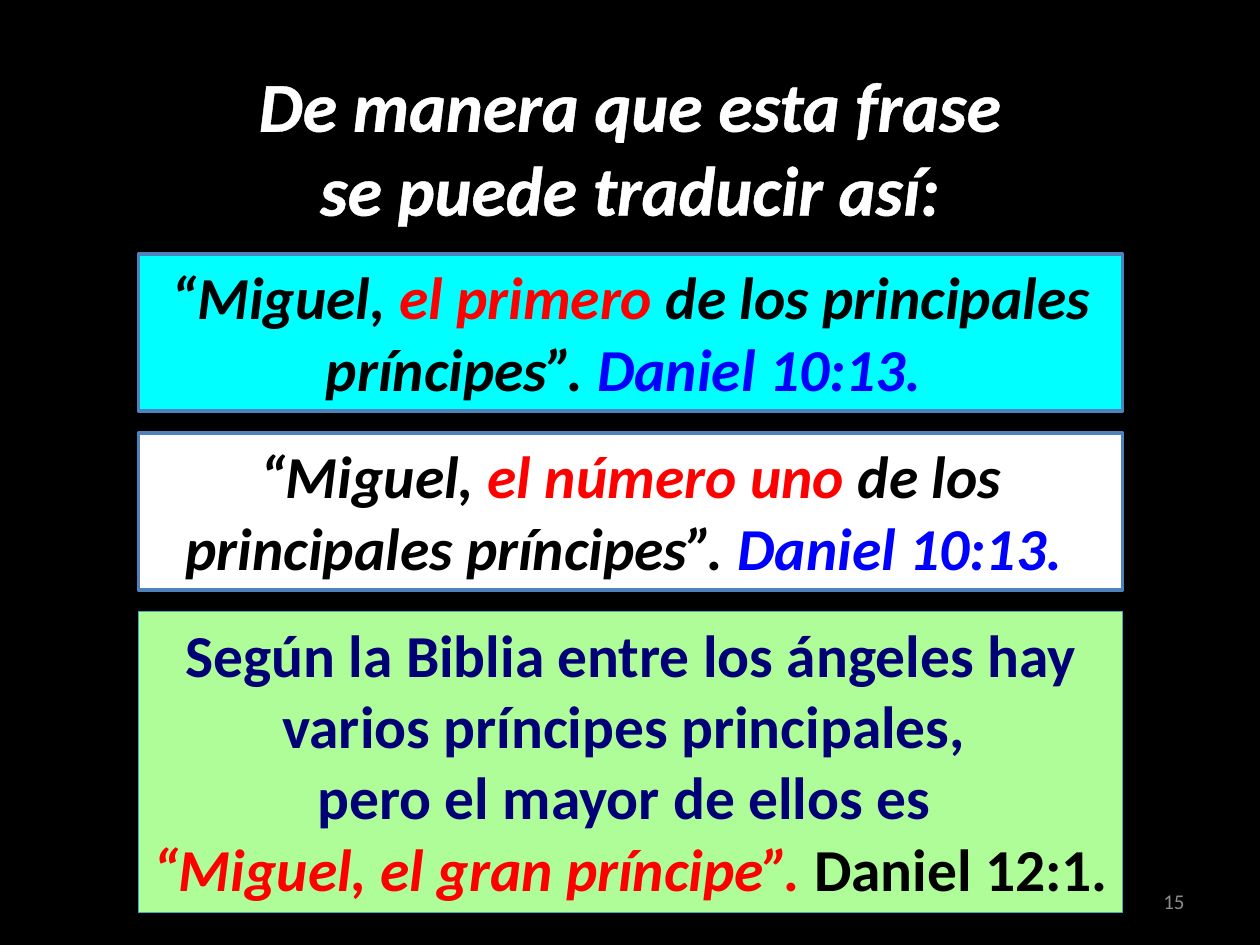
import pptx
import pptx.dml.color
import pptx.enum.shapes
import pptx.enum.text
import pptx.oxml
import pptx.oxml.ns
import pptx.util

Pt = pptx.util.Pt
RGB = pptx.dml.color.RGBColor
ALIGN = pptx.enum.text.PP_ALIGN
ANCHOR = pptx.enum.text.MSO_ANCHOR
AUTO_SIZE = pptx.enum.text.MSO_AUTO_SIZE

BLACK = RGB(0x00, 0x00, 0x00)
WHITE = RGB(0xFF, 0xFF, 0xFF)
RED = RGB(0xFF, 0x00, 0x00)
BLUE = RGB(0x00, 0x00, 0xFF)
NAVY = RGB(0x00, 0x00, 0x76)
CYAN = RGB(0x00, 0xFF, 0xFF)
GREEN = RGB(0xAE, 0xFD, 0x99)
FRAME_BLUE = RGB(0x4F, 0x81, 0xBD)
FRAME_TEAL = RGB(0x46, 0xAA, 0xC5)
GRAY = RGB(0x8C, 0x8C, 0x8C)

HEADING = dict(name="Calibri", size=Pt(40), bold=True, italic=True)
PLAIN = dict(name="Calibri", size=Pt(34), bold=True, italic=False)
QUOTE = dict(PLAIN, italic=True)
NUMBER = dict(name="Calibri", size=Pt(12))

BOX_LEFT, BOX_WIDTH = 79.2, 562.3


def set_attributes(target, values):
    for key, value in values.items():
        setattr(target, key, value)


def outline_text(run, color):
    outline = pptx.oxml.parse_xml(
        f'<a:ln {pptx.oxml.ns.nsdecls("a")} w="{Pt(0.75)}">'
        f'<a:solidFill><a:srgbClr val="{color}"/></a:solidFill></a:ln>')
    run.font._element.insert(0, outline)


def write_paragraphs(frame, paragraphs, align=ALIGN.CENTER, outlined=True):
    """Fill the frame with lists of (text, colour, font values)."""
    for index, pieces in enumerate(paragraphs):
        paragraph = frame.add_paragraph() if index else frame.paragraphs[0]
        paragraph.alignment = align
        for text, color, font_values in pieces:
            run = paragraph.add_run()
            run.text = text
            set_attributes(run.font, font_values)
            run.font.color.rgb = color
            if outlined:
                outline_text(run, color)


def add_heading(slide, left, top, width, height):
    heading = slide.shapes.title
    set_attributes(heading, dict(left=Pt(left), top=Pt(top),
                                 width=Pt(width), height=Pt(height)))
    set_attributes(heading.text_frame, dict(
        word_wrap=True, vertical_anchor=ANCHOR.TOP,
        auto_size=AUTO_SIZE.SHAPE_TO_FIT_TEXT))
    write_paragraphs(heading.text_frame, [
        [("De manera que esta frase se puede traducir así:", WHITE, HEADING)]])


def add_text_panel(slide, top, height, fill, frame_color, frame_width, paragraphs):
    panel = slide.shapes.add_shape(
        pptx.enum.shapes.MSO_SHAPE.RECTANGLE,
        Pt(BOX_LEFT), Pt(top), Pt(BOX_WIDTH), Pt(height))
    panel.fill.solid()
    panel.fill.fore_color.rgb = fill
    panel.line.color.rgb = frame_color
    panel.line.width = Pt(frame_width)
    panel.shadow.inherit = False
    set_attributes(panel.text_frame, dict(
        word_wrap=True, vertical_anchor=ANCHOR.TOP,
        auto_size=AUTO_SIZE.SHAPE_TO_FIT_TEXT))
    write_paragraphs(panel.text_frame, paragraphs)
    return panel


def add_translation(slide, top, height, fill, rank):
    add_text_panel(slide, top, height, fill, FRAME_BLUE, 2, [[
        ("“Miguel, ", BLACK, QUOTE),
        (rank, RED, QUOTE),
        ("de los principales príncipes”. ", BLACK, QUOTE),
        ("Daniel 10:13. ", BLUE, QUOTE)]])


def add_conclusion(slide, top, height):
    panel = add_text_panel(slide, top, height, GREEN, FRAME_TEAL, 0.75, [
        [("Según la Biblia entre los ángeles hay varios príncipes principales, ",
          NAVY, PLAIN)],
        [("pero el mayor de ellos es ", NAVY, PLAIN)],
        [("“Miguel, el gran príncipe”. ", RED, QUOTE),
         ("Daniel 12:1. ", BLACK, PLAIN)]])
    effects = panel._element.spPr.find(pptx.oxml.ns.qn("a:effectLst"))
    effects.append(pptx.oxml.parse_xml(
        f'<a:outerShdw {pptx.oxml.ns.nsdecls("a")} blurRad="{Pt(3.1)}" '
        f'dist="{Pt(1.6)}" dir="5400000" rotWithShape="0">'
        f'<a:srgbClr val="{BLACK}"><a:alpha val="38000"/></a:srgbClr>'
        '</a:outerShdw>'))


def add_slide_number(slide, left, top, width, height):
    number = slide.shapes.add_textbox(Pt(left), Pt(top), Pt(width), Pt(height))
    set_attributes(number.text_frame, dict(
        word_wrap=True, vertical_anchor=ANCHOR.MIDDLE))
    write_paragraphs(number.text_frame, [[("15", GRAY, NUMBER)]],
                     align=ALIGN.RIGHT, outlined=False)


def main():
    deck = pptx.Presentation()
    set_attributes(deck, dict(slide_width=Pt(720), slide_height=Pt(540)))
    slide = deck.slides.add_slide(deck.slide_layouts.get_by_name("Title Only"))
    slide.background.fill.solid()
    slide.background.fill.fore_color.rgb = BLACK

    add_slide_number(slide, 516, 500.5, 168, 28.75)
    add_heading(slide, 131.8, 31.7, 456.4, 104.4)
    add_conclusion(slide, 349.4, 172)
    add_translation(slide, 145.3, 89.7, CYAN, "el primero ")
    add_translation(slide, 247.5, 89.7, WHITE, "el número uno ")
    deck.save("out.pptx")


if __name__ == "__main__":
    main()
